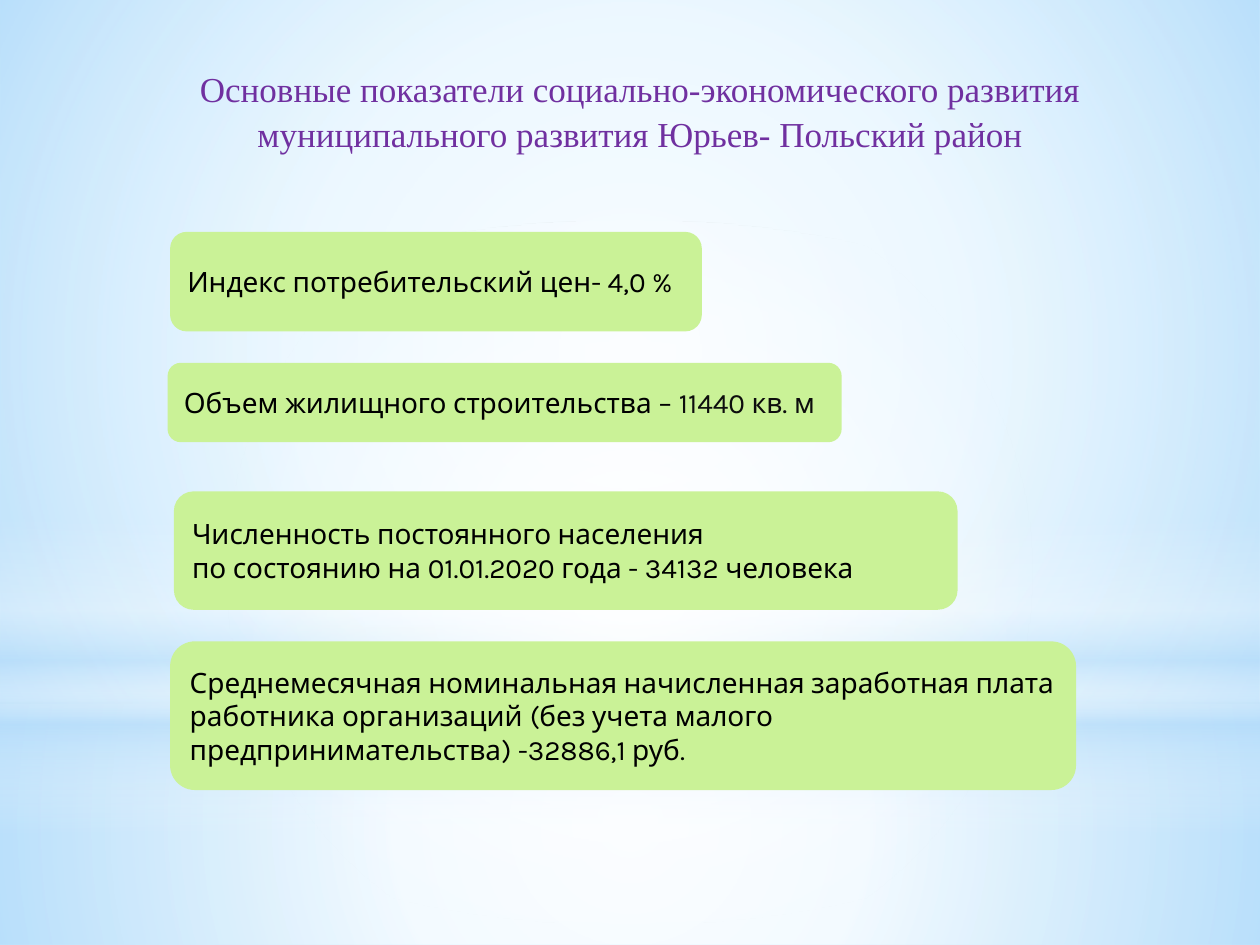
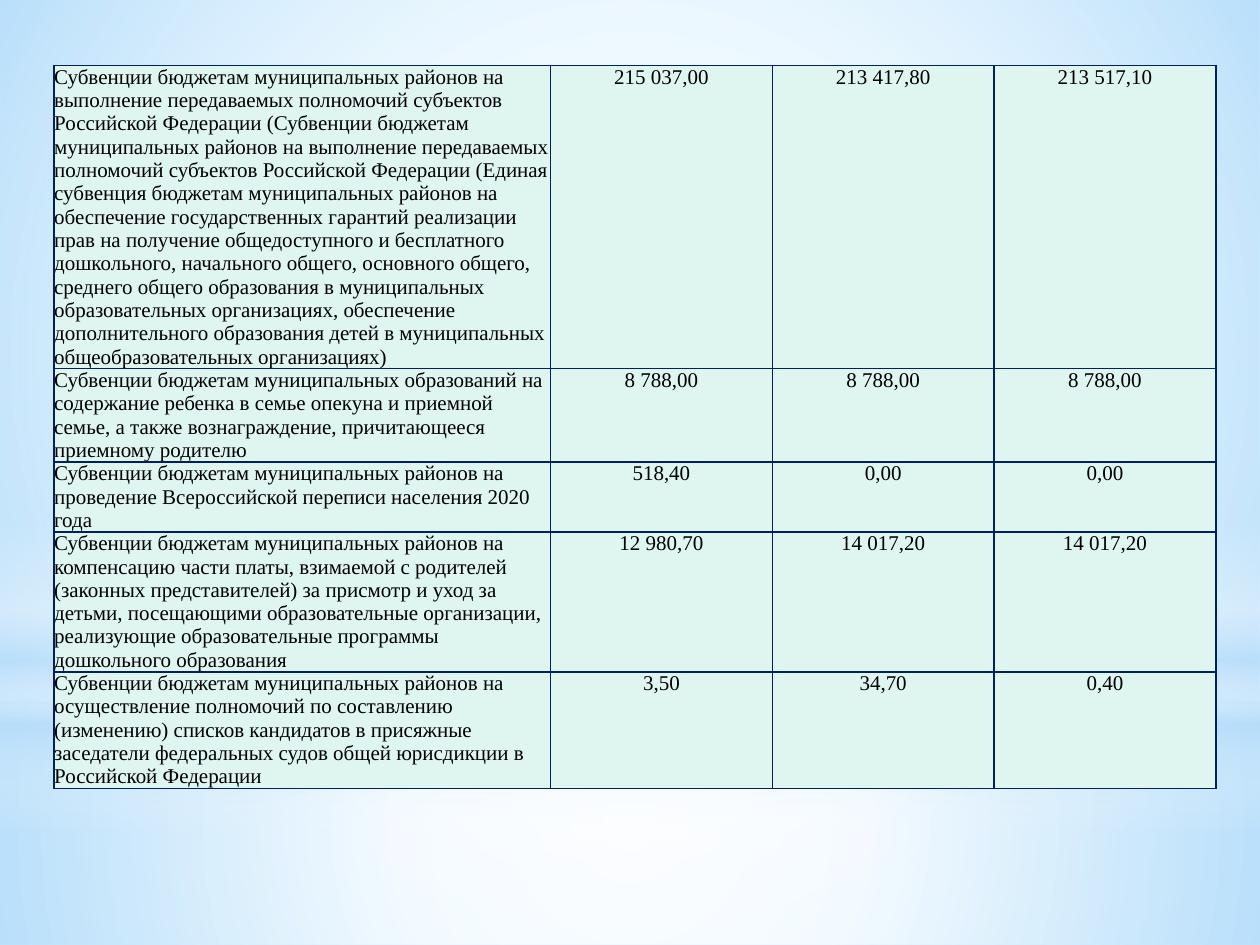
from dataclasses import dataclass

from lxml import etree
from pptx import Presentation
from pptx.dml.color import RGBColor
from pptx.enum.shapes import MSO_SHAPE
from pptx.enum.text import MSO_ANCHOR, MSO_AUTO_SIZE, PP_ALIGN
from pptx.oxml import parse_xml
from pptx.oxml.ns import qn
from pptx.slide import Slide
from pptx.util import Inches, Pt

RECTANGLE = MSO_SHAPE.RECTANGLE
OVAL = MSO_SHAPE.OVAL
ROUNDED = MSO_SHAPE.ROUNDED_RECTANGLE
LEFT, CENTER, JUSTIFY = PP_ALIGN.LEFT, PP_ALIGN.CENTER, PP_ALIGN.JUSTIFY
TOP, MIDDLE, BOTTOM = MSO_ANCHOR.TOP, MSO_ANCHOR.MIDDLE, MSO_ANCHOR.BOTTOM

DRAWING_NS = "http://schemas.openxmlformats.org/drawingml/2006/main"
TITLE_ONLY_LAYOUT, BLANK_LAYOUT = 5, 6


@dataclass(frozen=True)
class Theme:
    background: str = "CCECFF"
    glow: str = "FFFFFF"
    sky: str = "B4DCFA"
    title: str = "7030A0"
    text: str = "000000"
    soft_text: str = "0D0D0D"
    card: str = "CAF297"
    cell: str = "DFF5EF"
    border: str = "002060"
    serif: str = "Times New Roman"
    sans: str = "Karla"
    title_size: int = 20
    card_size: int = 16
    table_size: int = 12
    border_width: int = 1


THEME = Theme()


@dataclass(frozen=True)
class Box:
    left: float
    top: float
    width: float
    height: float

    def lengths(self) -> tuple:
        return tuple(Inches(side) for side in (self.left, self.top, self.width, self.height))


@dataclass(frozen=True)
class Stop:
    position: int
    color: str
    opacity: int


@dataclass(frozen=True)
class GlowLayer:
    box: Box
    stops: tuple
    preset: MSO_SHAPE = RECTANGLE
    radial: bool = True


@dataclass(frozen=True)
class Run:
    text: str
    color: str = THEME.text


@dataclass(frozen=True)
class Card:
    box: Box
    lines: tuple
    alignment: PP_ALIGN = LEFT


@dataclass(frozen=True)
class BudgetRow:
    purpose: str
    amounts: tuple
    height: float
    anchor: MSO_ANCHOR = BOTTOM


GLOW_LAYERS = (
    GlowLayer(Box(0, 5.58, 10, 1.92), (
        Stop(0, THEME.glow, 91), Stop(37, THEME.glow, 76), Stop(100, THEME.sky, 79))),
    GlowLayer(Box(0, 0, 10, 5.58), (
        Stop(0, THEME.glow, 89), Stop(48, THEME.glow, 62), Stop(100, THEME.sky, 79))),
    GlowLayer(Box(0, 4.12, 10, 2.5), (
        Stop(0, THEME.glow, 0), Stop(29, THEME.glow, 30), Stop(45, THEME.sky, 40),
        Stop(55, THEME.glow, 26), Stop(65, THEME.sky, 60), Stop(100, THEME.glow, 0)),
        radial=False),
    GlowLayer(Box(0, 1.75, 10, 5.58), (
        Stop(0, THEME.glow, 100), Stop(56, THEME.glow, 0)), preset=OVAL),
)

TITLE = ("Основные показатели социально-экономического развития "
         "муниципального развития Юрьев- Польский район")
TITLE_BOX = Box(0.58, 0.43, 9, 0.88)

CARDS = (
    Card(Box(1.35, 1.84, 4.22, 0.79), ((Run("Индекс потребительский цен- 4,0 %"),),)),
    Card(Box(1.33, 2.88, 5.35, 0.63), (
        (Run("Объем жилищного строительства – "), Run("11440 кв. м", THEME.soft_text)),)),
    Card(Box(1.38, 3.9, 6.22, 0.94), (
        (Run("Численность постоянного населения"),),
        (Run("по состоянию на 01.01.2020 года - 34132 человека"),))),
    Card(Box(1.35, 5.09, 7.19, 1.18), (
        (Run("Среднемесячная номинальная начисленная заработная плата"),),
        (Run("работника организаций (без учета малого"),),
        (Run("предпринимательства) -32886,1 руб."),)), JUSTIFY),
)

TABLE_BOX = Box(0.43, 0.52, 9.21, 6.22)
COLUMN_WIDTHS = (3.94, 1.76, 1.76, 1.76)
BUDGET_ROWS = (
    BudgetRow(
        "Субвенции бюджетам муниципальных районов на выполнение передаваемых полномочий "
        "субъектов Российской Федерации (Субвенции бюджетам муниципальных районов на "
        "выполнение передаваемых полномочий субъектов Российской Федерации (Единая "
        "субвенция бюджетам муниципальных районов на обеспечение государственных гарантий "
        "реализации прав на получение общедоступного и бесплатного дошкольного, начального "
        "общего, основного общего, среднего общего образования в муниципальных "
        "образовательных организациях, обеспечение дополнительного образования детей в "
        "муниципальных общеобразовательных организациях)",
        ("215 037,00", "213 417,80", "213 517,10"), 1.8, TOP),
    BudgetRow(
        "Субвенции бюджетам муниципальных образований на содержание ребенка в семье "
        "опекуна и приемной семье, а также вознаграждение, причитающееся приемному родителю",
        ("8 788,00", "8 788,00", "8 788,00"), 0.53),
    BudgetRow(
        "Субвенции бюджетам муниципальных районов на проведение Всероссийской переписи "
        "населения 2020 года",
        ("518,40", "0,00", "0,00"), 0.53, TOP),
    BudgetRow(
        "Субвенции бюджетам муниципальных районов на компенсацию части платы, взимаемой с "
        "родителей (законных представителей) за присмотр и уход за детьми, посещающими "
        "образовательные организации, реализующие образовательные программы дошкольного "
        "образования",
        ("12 980,70", "14 017,20", "14 017,20"), 0.74),
    BudgetRow(
        "Субвенции бюджетам муниципальных районов на осуществление полномочий по "
        "составлению (изменению) списков кандидатов в присяжные заседатели федеральных "
        "судов общей юрисдикции в Российской Федерации",
        ("3,50", "34,70", "0,40"), 0.64),
)


def add_run(paragraph, run: Run, font_name: str, size: int) -> None:
    text_run = paragraph.add_run()
    text_run.text = run.text
    text_run.font.name = font_name
    text_run.font.size = Pt(size)
    text_run.font.color.rgb = RGBColor.from_string(run.color)


def add_plain_shape(slide: Slide, preset: MSO_SHAPE, box: Box):
    """Add a preset shape without line or shadow."""
    shape = slide.shapes.add_shape(preset, *box.lengths())
    shape.shadow.inherit = False
    shape.line.fill.background()
    return shape


def gradient_element(layer: GlowLayer):
    stops = "".join(
        f'<a:gs pos="{stop.position * 1000}"><a:srgbClr val="{stop.color}">'
        f'<a:alpha val="{stop.opacity * 1000}"/></a:srgbClr></a:gs>'
        for stop in layer.stops)
    if layer.radial:
        direction = ('<a:path path="circle"><a:fillToRect l="50000" t="50000" '
                     'r="50000" b="50000"/></a:path>')
    else:
        direction = '<a:lin ang="5400000" scaled="0"/>'
    return parse_xml(f'<a:gradFill xmlns:a="{DRAWING_NS}" rotWithShape="1">'
                     f'<a:gsLst>{stops}</a:gsLst>{direction}</a:gradFill>')


def decorate_master(presentation, slide: Slide) -> None:
    """Build the glow layers on a slide and move them behind the master's placeholders."""
    master = presentation.slide_master
    master.background.fill.solid()
    master.background.fill.fore_color.rgb = RGBColor.from_string(THEME.background)
    for index, layer in enumerate(GLOW_LAYERS):
        shape = add_plain_shape(slide, layer.preset, layer.box)
        shape.fill.background()
        properties = shape.element.spPr
        properties.replace(properties.find(qn("a:noFill")), gradient_element(layer))
        master.shapes.element.insert(2 + index, shape.element)


def set_title(slide: Slide) -> None:
    title = slide.shapes.title
    title.left, title.top, title.width, title.height = TITLE_BOX.lengths()
    frame = title.text_frame
    frame.auto_size = MSO_AUTO_SIZE.NONE
    frame.vertical_anchor = MIDDLE
    paragraph = frame.paragraphs[0]
    paragraph.alignment = CENTER
    paragraph.line_spacing = 1.08
    add_run(paragraph, Run(TITLE, THEME.title), THEME.serif, THEME.title_size)


def add_card(slide: Slide, card: Card) -> None:
    shape = add_plain_shape(slide, ROUNDED, card.box)
    shape.fill.solid()
    shape.fill.fore_color.rgb = RGBColor.from_string(THEME.card)
    frame = shape.text_frame
    frame.word_wrap = False
    frame.vertical_anchor = MIDDLE
    for index, line in enumerate(card.lines):
        paragraph = frame.add_paragraph() if index else frame.paragraphs[0]
        paragraph.alignment = card.alignment
        for run in line:
            add_run(paragraph, run, THEME.sans, THEME.card_size)


def add_borders(cell) -> None:
    properties = cell._tc.get_or_add_tcPr()
    for side in ("lnL", "lnR", "lnT", "lnB"):
        line = etree.SubElement(properties, qn(f"a:{side}"), w=str(Pt(THEME.border_width)))
        fill = etree.SubElement(line, qn("a:solidFill"))
        etree.SubElement(fill, qn("a:srgbClr"), val=THEME.border)


def fill_cell(cell, text: str, alignment: PP_ALIGN, anchor: MSO_ANCHOR) -> None:
    add_borders(cell)
    cell.fill.solid()
    cell.fill.fore_color.rgb = RGBColor.from_string(THEME.cell)
    cell.margin_left = cell.margin_right = cell.margin_top = cell.margin_bottom = 0
    cell.vertical_anchor = anchor
    paragraph = cell.text_frame.paragraphs[0]
    paragraph.alignment = alignment
    add_run(paragraph, Run(text), THEME.serif, THEME.table_size)


def add_budget_table(slide: Slide) -> None:
    graphic_frame = slide.shapes.add_table(
        len(BUDGET_ROWS), len(COLUMN_WIDTHS), *TABLE_BOX.lengths())
    table = graphic_frame.table
    table.first_row = table.horz_banding = False
    for column, width in zip(table.columns, COLUMN_WIDTHS):
        column.width = Inches(width)
    for row, budget_row in zip(table.rows, BUDGET_ROWS):
        row.height = Inches(budget_row.height)
        purpose_cell, *amount_cells = row.cells
        fill_cell(purpose_cell, budget_row.purpose, LEFT, budget_row.anchor)
        for cell, amount in zip(amount_cells, budget_row.amounts):
            fill_cell(cell, amount, CENTER, TOP)
    graphic_frame.height = Inches(TABLE_BOX.height)


def main() -> None:
    presentation = Presentation()
    presentation.slide_width, presentation.slide_height = Inches(10), Inches(7.5)
    layouts = presentation.slide_layouts

    indicators_slide = presentation.slides.add_slide(layouts[TITLE_ONLY_LAYOUT])
    decorate_master(presentation, indicators_slide)
    set_title(indicators_slide)
    for card in CARDS:
        add_card(indicators_slide, card)

    subventions_slide = presentation.slides.add_slide(layouts[BLANK_LAYOUT])
    add_budget_table(subventions_slide)

    presentation.save("out.pptx")


if __name__ == "__main__":
    main()
